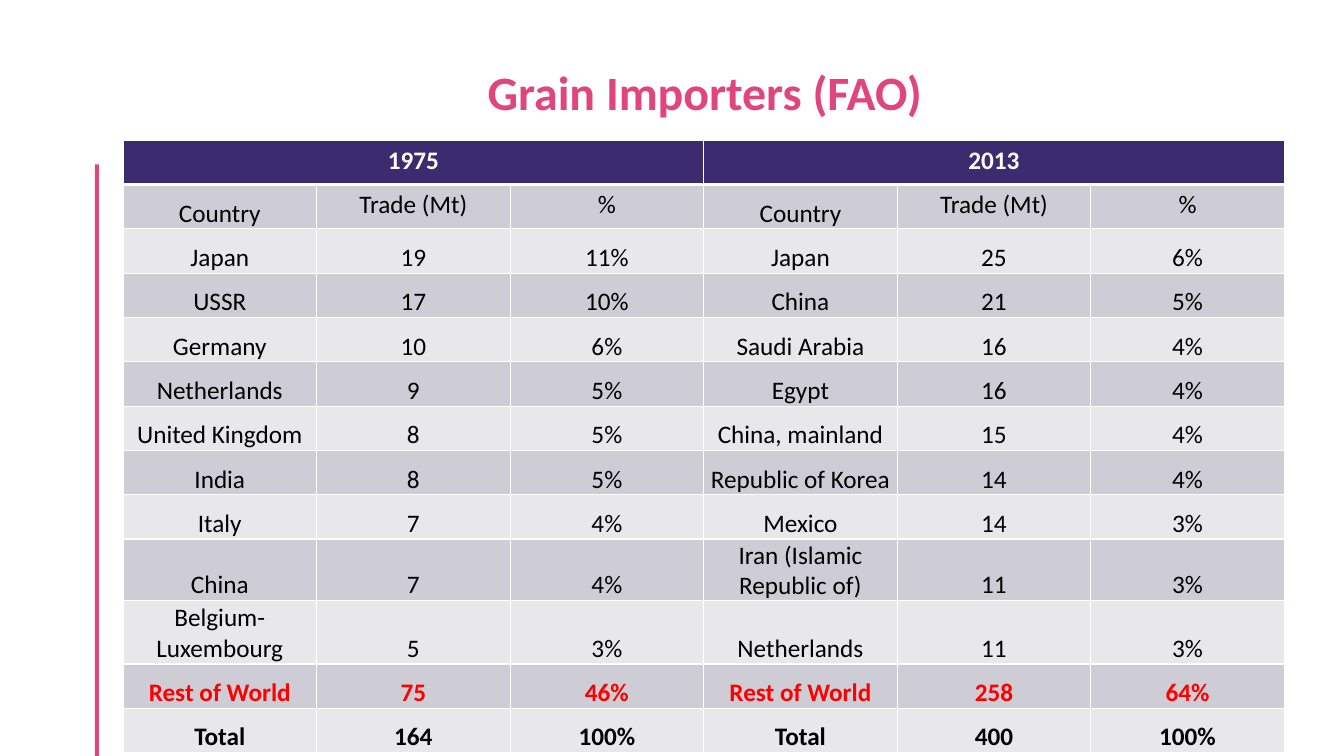
from lxml import etree
from pptx import Presentation
from pptx.dml.color import RGBColor
from pptx.enum import shapes, text
from pptx.oxml import ns
from pptx.util import Inches, Pt

PINK = RGBColor(0xE0, 0x45, 0x7B)
NAVY = RGBColor(0x3C, 0x2B, 0x6E)
DARK = RGBColor(0xCE, 0xCD, 0xD5)
LIGHT = RGBColor(0xE8, 0xE8, 0xEB)
WHITE = RGBColor(0xFF, 0xFF, 0xFF)
BLACK = RGBColor(0, 0, 0)
RED = RGBColor(0xFF, 0, 0)

YEARS = ["1975", "2013"]
ROWS = [
    ["Country", "Trade (Mt)", "%"] * 2,
    ["Japan", "19", "11%", "Japan", "25", "6%"],
    ["USSR", "17", "10%", "China", "21", "5%"],
    ["Germany", "10", "6%", "Saudi Arabia", "16", "4%"],
    ["Netherlands", "9", "5%", "Egypt", "16", "4%"],
    ["United Kingdom", "8", "5%", "China, mainland", "15", "4%"],
    ["India", "8", "5%", "Republic of Korea", "14", "4%"],
    ["Italy", "7", "4%", "Mexico", "14", "3%"],
    ["China", "7", "4%", "Iran (Islamic Republic of)", "11", "3%"],
    ["Belgium-Luxembourg", "5", "3%", "Netherlands", "11", "3%"],
    ["Rest of World", "75", "46%", "Rest of World", "258", "64%"],
    ["Total", "164", "100%", "Total", "400", "100%"],
]
TALL = {9: 0.6, 10: 0.63}


def write(frame, words, size=18, color=BLACK, bold=False, gap=None):
    """Put one centred paragraph into a text frame."""
    para = frame.paragraphs[0]
    para.alignment = text.PP_ALIGN.CENTER
    para.line_spacing = gap
    run = para.add_run()
    run.text = words
    font = run.font
    font.name, font.size, font.bold = "Calibri", Pt(size), bold
    font.color.rgb = color


def edge(cell, top=1, bottom=1):
    """Draw the white borders of a cell."""
    props = cell._tc.get_or_add_tcPr()
    for side, width in zip("LRTB", (1, 1, top, bottom)):
        line = etree.SubElement(props, ns.qn("a:ln" + side), w=str(Pt(width)))
        fill = etree.SubElement(line, ns.qn("a:solidFill"))
        etree.SubElement(fill, ns.qn("a:srgbClr"), val=str(WHITE))


def paint(cell, color):
    """Fill a cell with one colour."""
    cell.fill.solid()
    cell.fill.fore_color.rgb = color


def sink(cell):
    """Set cell text on the bottom edge with thin margins."""
    cell.vertical_anchor = text.MSO_ANCHOR.BOTTOM
    cell.margin_left = cell.margin_right = cell.margin_top = Inches(0.01)
    cell.margin_bottom = 0


def add_bar(slide):
    """Add the pink bar at the left."""
    bar = slide.shapes.add_shape(
        shapes.MSO_SHAPE.RECTANGLE,
        Inches(0.94), Inches(1.63), Inches(0.04), Inches(5.87))
    bar.shadow.inherit = False
    bar.fill.solid()
    bar.fill.fore_color.rgb = PINK
    bar.line.fill.background()


def add_title(slide, words):
    """Add the slide heading."""
    box = slide.shapes.add_textbox(
        Inches(1.41), Inches(0.71), Inches(11.16), Inches(0.46))
    frame = box.text_frame
    frame.word_wrap = True
    frame.vertical_anchor = text.MSO_ANCHOR.MIDDLE
    frame.margin_left = frame.margin_right = 0
    frame.margin_top = frame.margin_bottom = 0
    write(frame, words, size=34.2, color=PINK, bold=True, gap=0.9)


def add_grid(slide):
    """Add the table of importers for both years."""
    count = len(ROWS) + 1
    grid = slide.shapes.add_table(
        count, 6, Inches(1.22), Inches(1.39), Inches(11.52), Inches(6.04)).table
    for row in range(count):
        grid.rows[row].height = Inches(TALL.get(row, 0.44))
    for col in range(6):
        head = grid.cell(0, col)
        edge(head, bottom=3)
        paint(head, NAVY)
    for index, year in enumerate(YEARS):
        head = grid.cell(0, index * 3)
        head.merge(grid.cell(0, index * 3 + 2))
        write(head.text_frame, year, color=WHITE, bold=True)
    for row, words in enumerate(ROWS, 1):
        color = RED if words[0] == "Rest of World" else BLACK
        for col, word in enumerate(words):
            cell = grid.cell(row, col)
            edge(cell, top=3 if row == 1 else 1)
            paint(cell, DARK if row % 2 else LIGHT)
            if row > 1 or col % 3 == 0:
                sink(cell)
            write(cell.text_frame, word, color=color, bold=row >= count - 2)


def main():
    """Build and save the slide."""
    deck = Presentation()
    deck.slide_width, deck.slide_height = Inches(13.33), Inches(7.5)
    slide = deck.slides.add_slide(deck.slide_layouts[6])
    add_bar(slide)
    add_title(slide, "Grain Importers (FAO)")
    add_grid(slide)
    deck.save("out.pptx")


if __name__ == "__main__":
    main()
